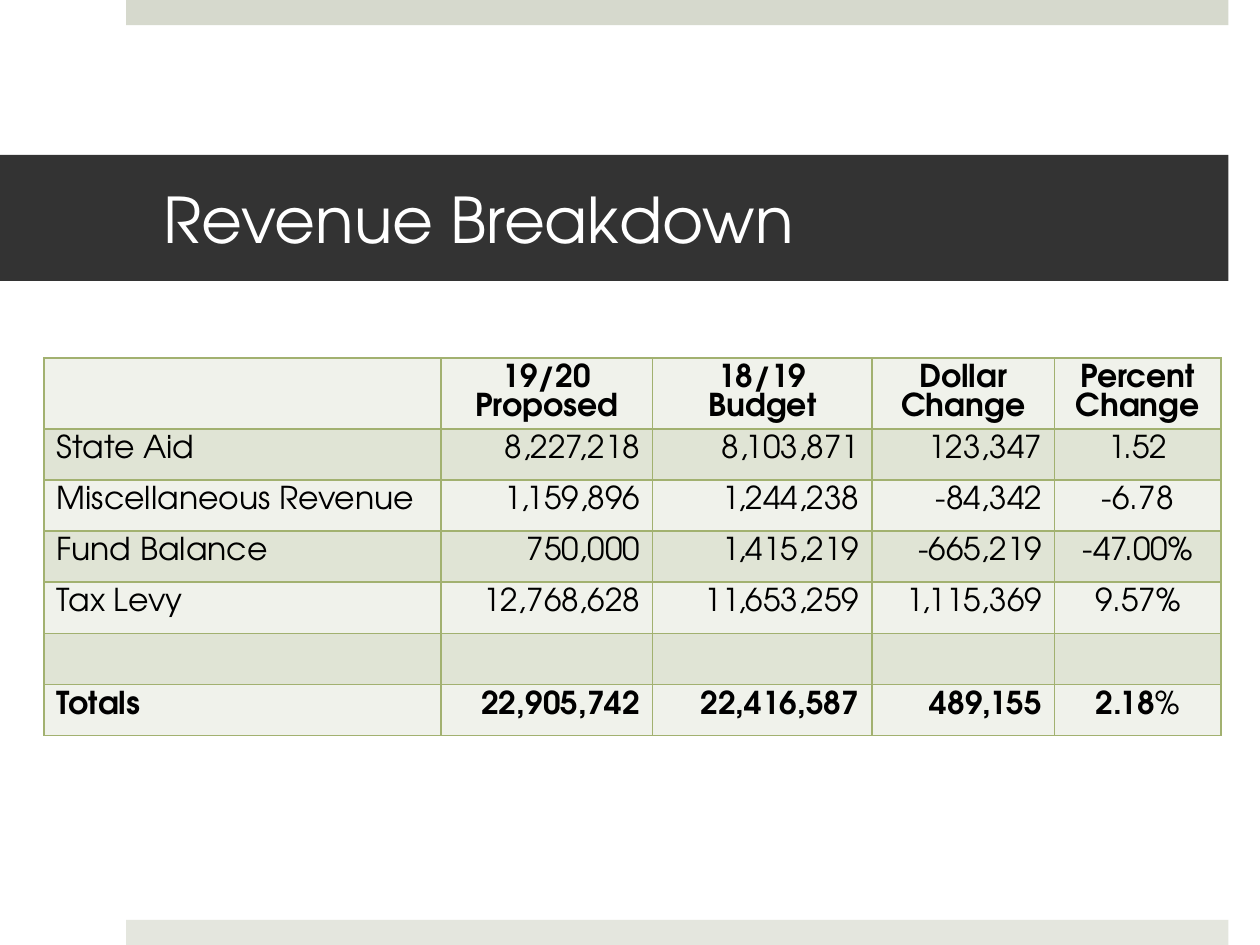
from dataclasses import dataclass

from lxml import etree
from pptx import Presentation
from pptx.dml.color import RGBColor
from pptx.enum import shapes, text
from pptx.oxml.ns import qn
from pptx.util import Inches, Pt


@dataclass(frozen=True)
class Theme:
    font: str = "TeX Gyre Adventor"
    title_size: int = 36
    table_size: int = 18
    top_bar: str = "D6D9CD"
    bottom_bar: str = "E4E6DE"
    banner: str = "333333"
    banner_text: str = "FFFFFF"
    ink: str = "000000"
    bands: tuple = ("F0F2EB", "E0E4D5")
    border: str = "A2B170"


THEME = Theme()
LEFT, CENTER, RIGHT = (text.PP_ALIGN.LEFT, text.PP_ALIGN.CENTER,
                       text.PP_ALIGN.RIGHT)

COLUMN_WIDTHS = (3.15, 1.68, 1.74, 1.45, 1.32)
COLUMN_ALIGNS = (LEFT, RIGHT, RIGHT, RIGHT, CENTER)
REVENUE = (
    ("", "19/20 Proposed", "18/19 Budget", "Dollar Change", "Percent Change"),
    ("State Aid", "8,227,218", "8,103,871", "123,347", "1.52"),
    ("Miscellaneous Revenue", "1,159,896", "1,244,238", "-84,342", "-6.78"),
    ("Fund Balance", "750,000", "1,415,219", "-665,219", "-47.00%"),
    ("Tax Levy", "12,768,628", "11,653,259", "1,115,369", "9.57%"),
    ("", "", "", "", ""),
    ("Totals", "22,905,742", "22,416,587", "489,155", "2.18%"),
)


def set_attributes(target, values):
    for name, value in values.items():
        setattr(target, name, value)


def style_font(font, size, color, bold=False):
    set_attributes(font, {"name": THEME.font, "size": Pt(size), "bold": bold})
    font.color.rgb = RGBColor.from_string(color)


def add_bar(slide, box, color):
    bar = slide.shapes.add_shape(shapes.MSO_SHAPE.RECTANGLE,
                                 *map(Inches, box))
    bar.shadow.inherit = False
    bar.fill.solid()
    bar.fill.fore_color.rgb = RGBColor.from_string(color)
    bar.line.fill.background()
    return bar


def add_title_banner(slide, box, title):
    frame = add_bar(slide, box, THEME.banner).text_frame
    set_attributes(frame, {
        "word_wrap": True,
        "vertical_anchor": text.MSO_ANCHOR.MIDDLE,
        "margin_left": Inches(1.3),
        "margin_right": Inches(0.3),
        "margin_top": Inches(0.05),
        "margin_bottom": Inches(0.05),
    })
    paragraph = frame.paragraphs[0]
    paragraph.alignment = LEFT
    run = paragraph.add_run()
    run.text = title
    style_font(run.font, THEME.title_size, THEME.banner_text)


def add_borders(cell):
    """Outline all four sides; lines must precede the fill in the cell XML."""
    properties = cell._tc.get_or_add_tcPr()
    for index, side in enumerate(("a:lnL", "a:lnR", "a:lnT", "a:lnB")):
        line = etree.Element(qn(side), w=str(Pt(1)))
        fill = etree.SubElement(line, qn("a:solidFill"))
        etree.SubElement(fill, qn("a:srgbClr"), val=THEME.border)
        properties.insert(index, line)


def fill_cell(cell, value, align, bold, band):
    cell.fill.solid()
    cell.fill.fore_color.rgb = RGBColor.from_string(band)
    add_borders(cell)
    paragraph = cell.text_frame.paragraphs[0]
    paragraph.alignment = align
    style_font(paragraph.font, THEME.table_size, THEME.ink, bold)
    # The percent sign stays regular even in the bold totals row.
    number = value.removesuffix("%")
    for part, part_bold in ((number, bold), (value[len(number):], False)):
        if part:
            run = paragraph.add_run()
            run.text = part
            style_font(run.font, THEME.table_size, THEME.ink, part_bold)


def add_revenue_table(slide, box):
    last = len(REVENUE) - 1
    table = slide.shapes.add_table(len(REVENUE), len(COLUMN_WIDTHS),
                                   *map(Inches, box)).table
    for column, width in zip(table.columns, COLUMN_WIDTHS):
        column.width = Inches(width)
    for r, values in enumerate(REVENUE):
        table.rows[r].height = Inches(box[3] / len(REVENUE))
        for c, value in enumerate(values):
            fill_cell(table.cell(r, c), value,
                      CENTER if r == 0 else COLUMN_ALIGNS[c],
                      r in (0, last), THEME.bands[r % 2])


def build_revenue_slide(slide):
    add_bar(slide, (1, 0, 8.75, 0.2), THEME.top_bar)
    add_bar(slide, (1, 7.3, 8.75, 0.2), THEME.bottom_bar)
    add_title_banner(slide, (0, 1.23, 9.75, 1), "Revenue Breakdown")
    add_revenue_table(slide, (0.35, 2.84, sum(COLUMN_WIDTHS), 2.84))


def main():
    presentation = Presentation()
    set_attributes(presentation, {"slide_width": Inches(10),
                                  "slide_height": Inches(7.5)})
    build_revenue_slide(
        presentation.slides.add_slide(presentation.slide_layouts[6]))
    presentation.save("out.pptx")


if __name__ == "__main__":
    main()
